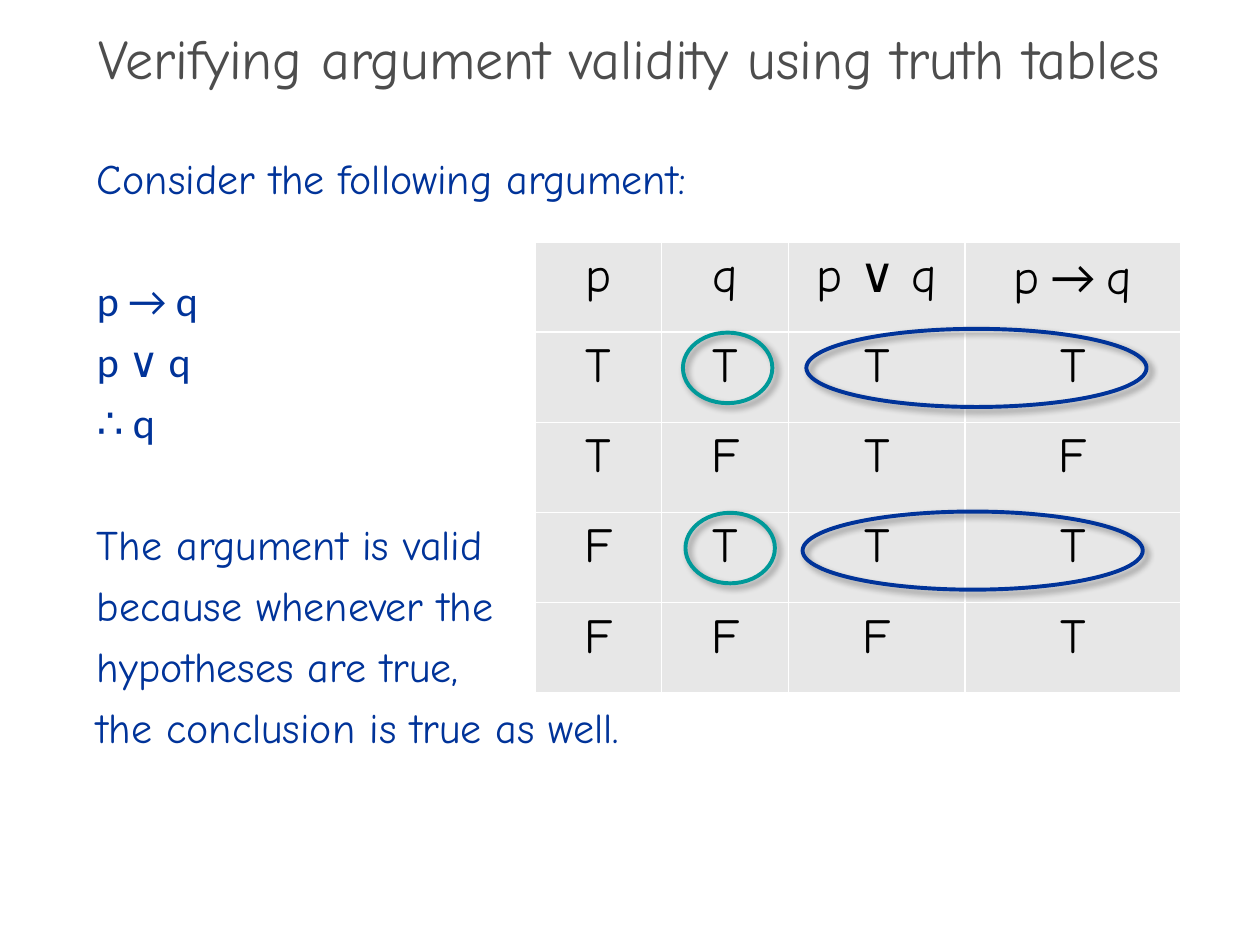
from lxml.etree import SubElement
from pptx import Presentation
from pptx.dml.color import RGBColor
from pptx.enum.shapes import MSO_SHAPE as Shape
from pptx.enum.text import MSO_ANCHOR as Anchor, PP_ALIGN as Align
from pptx.oxml import parse_xml
from pptx.oxml.ns import nsdecls, qn
from pptx.util import Inches, Pt

HAND, SANS = "Comic Neue", "Calibri"
NAVY, TEAL, GRAY, PALE = "003399", "009999", "4D4D4D", "E7E7E7"
BLACK, WHITE = "000000", "FFFFFF"

TITLE = "Verifying argument validity using truth tables"
BLOCKS = [
    (HAND, ["Consider the following argument:"]),
    (SANS, ["p → q", "p ∨ q", "∴ q"]),
    (HAND, ["The argument is valid", "because whenever the",
            "hypotheses are true,", "the conclusion is true as well."]),
]
HEAD = [[("p", HAND)], [("q", HAND)], [("p ∨ q", HAND)],
        [("p", HAND), (" → ", SANS), ("q", HAND)]]
TRUTH = ["TTTT", "TFTF", "FTTT", "FFFT"]
ROWS = HEAD, *[[[(mark, HAND)] for mark in row] for row in TRUTH]
WIDTHS = [1, 1.01, 1.4, 1.71]
HIGH = 3.58 / len(ROWS)
RINGS = [
    (NAVY, (2.7, 0.62), [(6.4, 2.61), (6.37, 4.06)]),
    (TEAL, (0.71, 0.56), [(5.42, 2.64), (5.44, 4.07)]),
]
SHADOW = f"""<a:outerShdw {nsdecls('a')} blurRad="{Pt(4)}" dist="{Pt(3)}"
 dir="2700000" algn="tl" rotWithShape="0">
<a:srgbClr val="{BLACK}"><a:alpha val="40000"/></a:srgbClr></a:outerShdw>"""


def paint(part, tone):
    part.rgb = RGBColor.from_string(tone)


def style(font, size, tone, name=HAND):
    font.size, font.name, font.bold = Pt(size), name, False
    paint(font.color, tone)


def edge(cell):
    props = cell._tc.get_or_add_tcPr()
    for i, side in enumerate(("lnL", "lnR", "lnT", "lnB")):
        line = parse_xml(f'<a:{side} {nsdecls("a")} w="{Pt(1)}"/>')
        fill = SubElement(line, qn("a:solidFill"))
        SubElement(fill, qn("a:srgbClr"), val=WHITE)
        props.insert(i, line)


def add_title(slide):
    title = slide.shapes.title
    title.left, title.top = Inches(0), Inches(0.27)
    title.width, title.height = Inches(10), Inches(0.5)
    title.text_frame.text = TITLE
    title.text_frame.vertical_anchor = Anchor.MIDDLE
    para = title.text_frame.paragraphs[0]
    para.alignment, para.line_spacing = Align.CENTER, 0.7
    style(para.font, 32, GRAY)


def add_body(slide):
    box = slide.shapes.add_textbox(
        Inches(0.67), Inches(1.16), Inches(8.58), Inches(5.92))
    frame = box.text_frame
    frame.word_wrap = True
    lines = [(name, text, i == 0 and name != BLOCKS[0][1])
             for name, texts in BLOCKS for i, text in enumerate(texts)]
    for n, (name, text, first) in enumerate(lines):
        para = frame.add_paragraph() if n else frame.paragraphs[0]
        para.text, para.space_after = text, Pt(6)
        if n and first:
            para.space_before = Pt(35)
        style(para.font, 24, NAVY, name)


def add_truth(slide):
    table = slide.shapes.add_table(
        len(ROWS), len(WIDTHS), Inches(4.25), Inches(1.92),
        Inches(sum(WIDTHS)), Inches(HIGH * len(ROWS))).table
    table.first_row = table.horz_banding = False
    for col, width in zip(table.columns, WIDTHS):
        col.width = Inches(width)
    for r, row in enumerate(ROWS):
        table.rows[r].height = Inches(HIGH)
        for c, parts in enumerate(row):
            cell = table.cell(r, c)
            cell.fill.solid()
            paint(cell.fill.fore_color, PALE)
            edge(cell)
            para = cell.text_frame.paragraphs[0]
            para.alignment, para.space_before = Align.CENTER, Pt(5.6)
            for text, name in parts:
                run = para.add_run()
                run.text = text
                style(run.font, 28, BLACK, name)


def add_rings(slide):
    for tone, size, spots in RINGS:
        for spot in spots:
            ring = slide.shapes.add_shape(
                Shape.OVAL, *[Inches(v) for v in spot + size])
            ring.fill.background()
            paint(ring.line.color, tone)
            ring.line.width = Pt(2.25)
            ring.shadow.inherit = False
            ring._element.spPr.find(qn("a:effectLst")).append(
                parse_xml(SHADOW))


def main():
    deck = Presentation()
    deck.slide_width, deck.slide_height = Inches(10), Inches(7.5)
    slide = deck.slides.add_slide(deck.slide_layouts[5])
    for add in (add_title, add_body, add_truth, add_rings):
        add(slide)
    deck.save("out.pptx")


if __name__ == "__main__":
    main()
